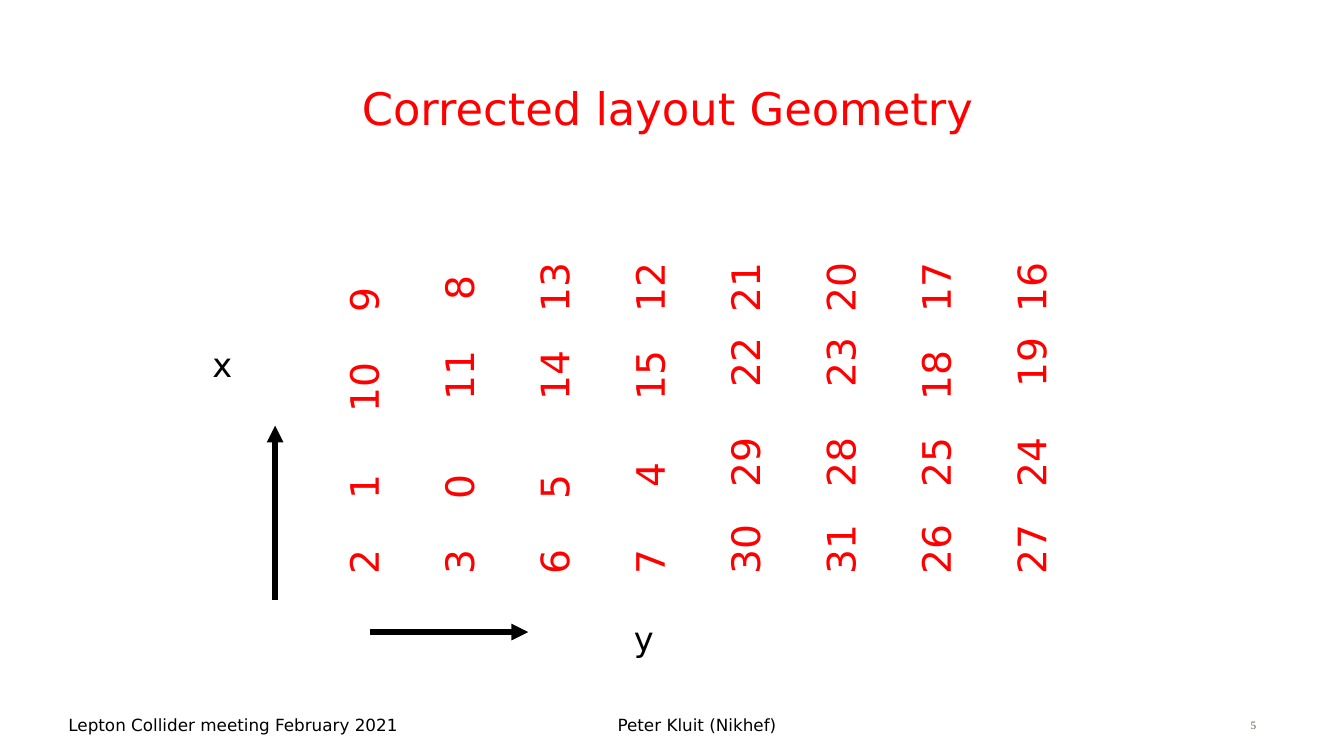
from dataclasses import dataclass

from lxml import etree
from pptx import Presentation
from pptx.dml.color import RGBColor
from pptx.enum.shapes import MSO_CONNECTOR
from pptx.enum.text import MSO_ANCHOR, PP_ALIGN
from pptx.oxml.ns import qn
from pptx.util import Pt

STRAIGHT = MSO_CONNECTOR.STRAIGHT
TOP, BOTTOM = MSO_ANCHOR.TOP, MSO_ANCHOR.BOTTOM
LEFT, CENTER, RIGHT = PP_ALIGN.LEFT, PP_ALIGN.CENTER, PP_ALIGN.RIGHT


@dataclass(frozen=True)
class Theme:
    sans: str = "DejaVu Sans"
    serif: str = "Times New Roman"
    red: RGBColor = RGBColor(0xFF, 0, 0)
    black: RGBColor = RGBColor(0, 0, 0)
    grey: RGBColor = RGBColor(0x5E, 0x57, 0x4E)
    title: int = 32
    channel: int = 28
    axis: int = 24
    footer: int = 12
    number: int = 8
    arrow: int = 4


THEME = Theme()

# Channel numbers along x, with the tab stops between them in half digits
CHANNELS = [
    ((2, 1, 10, 9), (6, 13, 21)),
    ((3, 0, 11, 8), (6, 14, 22)),
    ((6, 5, 14, 13), (6, 14, 21)),
    ((7, 4, 15, 12), (7, 14, 21)),
    ((30, 29, 22, 21), (7, 15, 21)),
    ((31, 28, 23, 20), (7, 15, 21)),
    ((26, 25, 18, 17), (7, 14, 21)),
    ((27, 24, 19, 16), (7, 15, 21)),
]
HALF_DIGIT = 8.9
CHANNEL_GAP = 34.5


def add_box(slide, x, y, w, h, anchor=TOP, wrap=True):
    sp = slide.shapes.add_textbox(Pt(x), Pt(y), Pt(w), Pt(h))
    tf = sp.text_frame
    tf.word_wrap = wrap
    tf.vertical_anchor = anchor
    return sp


def write(p, text, size, color=THEME.black, font=THEME.sans, align=LEFT):
    p.alignment = align
    r = p.add_run()
    r.text = text
    r.font.size = Pt(size)
    r.font.name = font
    r.font.color.rgb = color


def add_label(slide, text, x, y, w, h, size, anchor=BOTTOM, wrap=True, **fmt):
    sp = add_box(slide, x, y, w, h, anchor, wrap)
    write(sp.text_frame.paragraphs[0], text, size, **fmt)


def set_tabs(p, stops):
    tabs = etree.SubElement(p._p.get_or_add_pPr(), qn("a:tabLst"))
    for stop in stops:
        etree.SubElement(tabs, qn("a:tab"), pos=str(Pt(stop)), algn="l")


def add_channels(slide):
    """Write the channel map, one paragraph per y position, turned upright."""
    sp = add_box(slide, 352, 20.4, 284, 510)
    sp.rotation = 270
    tf = sp.text_frame
    for i, (numbers, stops) in enumerate(CHANNELS):
        p = tf.add_paragraph() if i else tf.paragraphs[0]
        if i:
            p.space_before = Pt(CHANNEL_GAP)
        set_tabs(p, [stop * HALF_DIGIT for stop in stops])
        write(p, "\t".join(map(str, numbers)), THEME.channel, color=THEME.red)


def add_arrow(slide, x1, y1, x2, y2):
    line = slide.shapes.add_connector(STRAIGHT, Pt(x1), Pt(y1), Pt(x2), Pt(y2))
    line.line.color.rgb = THEME.black
    line.line.width = Pt(THEME.arrow)
    etree.SubElement(line.line._get_or_add_ln(), qn("a:tailEnd"), type="triangle")
    etree.SubElement(line._element.spPr, qn("a:effectLst"))


def main():
    prs = Presentation()
    prs.slide_width, prs.slide_height = Pt(960), Pt(540)
    slide = prs.slides.add_slide(prs.slide_layouts[6])

    add_label(slide, "Corrected layout Geometry", 69, 36, 816, 63.4,
              THEME.title, color=THEME.red, align=CENTER)
    add_channels(slide)

    add_arrow(slide, 196.5, 428.5, 196.5, 304)
    add_arrow(slide, 264.3, 451.5, 377.3, 451.5)
    for name, x, y in (("x", 144.7, 242), ("y", 445.7, 437.8)):
        add_label(slide, name, x, y, 28.8, 36, THEME.axis, anchor=TOP, wrap=False)

    add_label(slide, "Lepton Collider meeting February 2021", 41.8, 509, 386.6, 19.4,
              THEME.footer)
    add_label(slide, "Peter Kluit (Nikhef)", 342, 496.8, 311.8, 31.7,
              THEME.footer, align=CENTER)
    add_label(slide, "5", 704.2, 490.3, 200.2, 36, THEME.number,
              color=THEME.grey, font=THEME.serif, align=RIGHT)
    prs.save("out.pptx")


if __name__ == "__main__":
    main()
